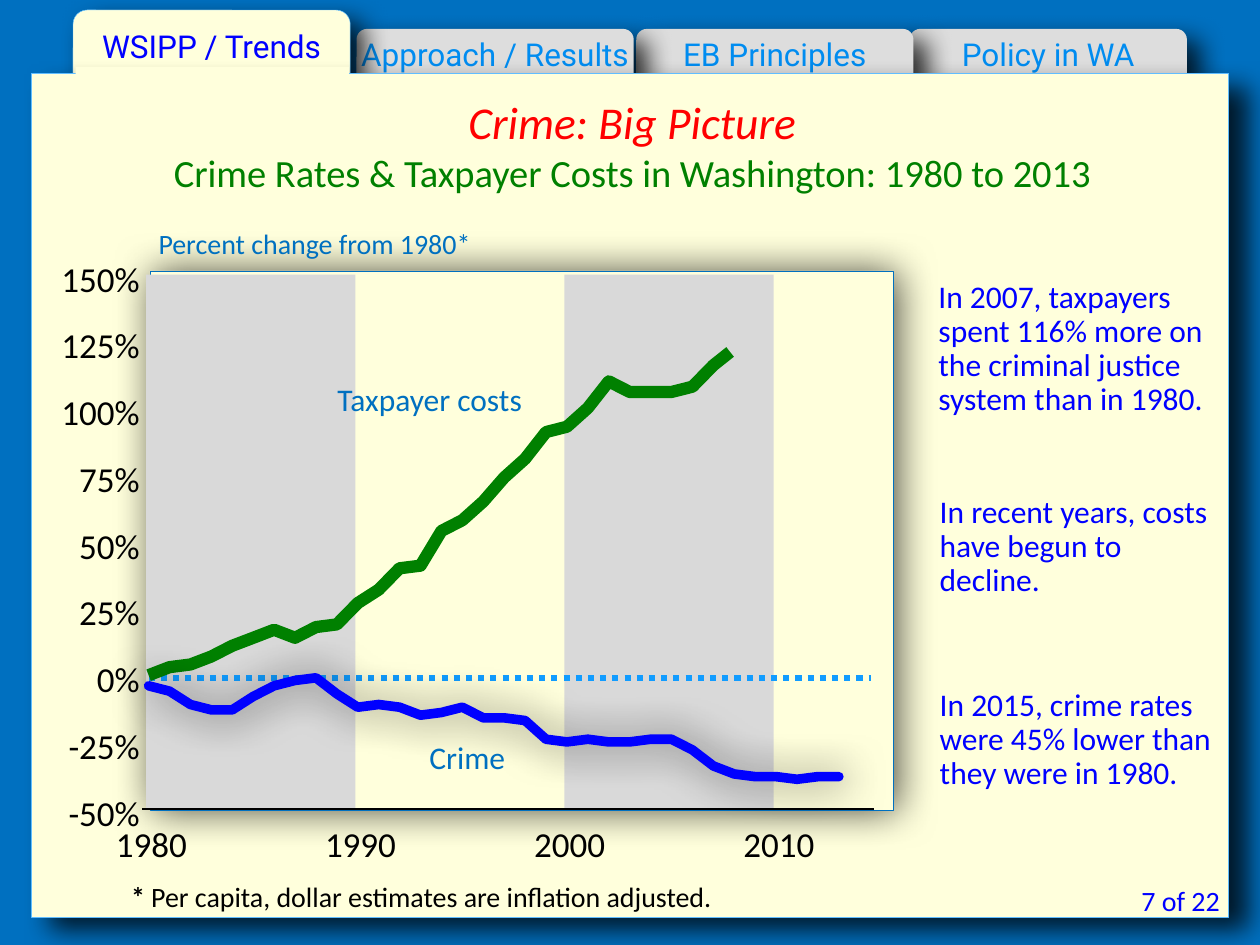
import pptx
import pptx.util
import pptx.dml.color
import pptx.enum.shapes
import pptx.enum.text
import pptx.enum.dml
import pptx.oxml
import pptx.oxml.ns
import pptx.oxml.xmlchemy

Inches, Pt = pptx.util.Inches, pptx.util.Pt
RGB = pptx.dml.color.RGBColor
Shape = pptx.enum.shapes.MSO_SHAPE
Align = pptx.enum.text.PP_ALIGN
Anchor = pptx.enum.text.MSO_ANCHOR
Node = pptx.oxml.xmlchemy.OxmlElement
qn = pptx.oxml.ns.qn

SKY = RGB(0x00, 0x70, 0xC0)
CREAM = RGB(0xFF, 0xFF, 0xDC)
GREY = RGB(0xDD, 0xDD, 0xDD)
BAND = RGB(0xD9, 0xD9, 0xD9)
PALE = RGB(0x60, 0xBD, 0xFF)
LINK = RGB(0x00, 0x8C, 0xF0)
DOTS = RGB(0x11, 0x9C, 0xFF)
BLUE = RGB(0x00, 0x00, 0xFF)
GREEN = RGB(0x00, 0x80, 0x00)
RED = RGB(0xFF, 0x00, 0x00)
BLACK = RGB(0x00, 0x00, 0x00)

deck = pptx.Presentation()
deck.slide_width, deck.slide_height = Inches(10), Inches(7.5)
slide = deck.slides.add_slide(deck.slide_layouts[5])
slide.background.fill.solid()
slide.background.fill.fore_color.rgb = SKY
shapes = slide.shapes


def style(shape, fill=None, line=None, width=0.25, shade=None):
    """Set fill, line and an outer shadow (alpha %, blur, distance, angle)."""
    shape.shadow.inherit = False
    if fill is None:
        shape.fill.background()
    else:
        shape.fill.solid()
        shape.fill.fore_color.rgb = fill
    if line is None:
        shape.line.fill.background()
    else:
        shape.line.color.rgb = line
        shape.line.width = Pt(width)
    if shade:
        alpha, blur, dist, angle = shade
        glow = pptx.oxml.parse_xml(
            '<a:outerShdw xmlns:a="http://schemas.openxmlformats.org/drawingml/2006/main" '
            f'blurRad="{Pt(blur)}" dist="{Pt(dist)}" dir="{angle * 60000}" algn="tl" '
            f'rotWithShape="0"><a:srgbClr val="000000"><a:alpha val="{alpha * 1000}"/>'
            '</a:srgbClr></a:outerShdw>')
        shape._element.spPr.find(qn("a:effectLst")).append(glow)


def write(shape, lines, inset=(0, 0, 0, 0), align=Align.LEFT, anchor=Anchor.TOP, space=1.0):
    """Fill a shape with paragraphs, each a list of (text, size, colour, extras)."""
    frame = shape.text_frame
    left, top, right, foot = (Inches(n) for n in inset)
    look = dict(word_wrap=True, margin_left=left, margin_top=top, margin_right=right,
                margin_bottom=foot, vertical_anchor=anchor,
                auto_size=pptx.enum.text.MSO_AUTO_SIZE.NONE)
    for name, value in look.items():
        setattr(frame, name, value)
    for i, runs in enumerate(lines):
        para = frame.add_paragraph() if i else frame.paragraphs[0]
        para.alignment, para.line_spacing = align, space
        for text, size, color, extra in runs:
            run = para.add_run()
            run.text = text
            run.font.color.rgb = color
            for name, value in (dict(name="Calibri", size=Pt(size)) | extra).items():
                setattr(run.font, name, value)


# Tabs, the front one last
DEEP = (79, 15, 10, 40)
tabs = [
    ("Policy in WA", 7.22, 0.23, 0.5, GREY, None, LINK),
    ("EB Principles", 5.05, 0.23, 0.5, GREY, None, LINK),
    ("Approach / Results", 2.83, 0.23, 0.5, GREY, None, LINK),
    ("WSIPP / Trends", 0.58, 0.08, 0.67, CREAM, PALE, BLUE),
]
for label, x, y, high, fill, edge, ink in tabs:
    tab = shapes.add_shape(Shape.ROUNDED_RECTANGLE, Inches(x), Inches(y), Inches(2.2), Inches(high))
    style(tab, fill, edge, shade=DEEP)
    write(tab, [[(label, 18, ink, dict(name="Roboto"))]], (0, 0, 0, 0.1), Align.CENTER, Anchor.MIDDLE)

# Page panel, the strip that joins it to the front tab, and the plot area
SOFT = (71, 23, 2, 20)
for x, y, wide, high, edge, width, shade in [
    (0.25, 0.58, 9.5, 6.7, PALE, 0.05, (79, 15, 14, 36)),
    (0.6, 0.53, 2.17, 0.22, None, 0, None),
    (1.19, 2.15, 5.9, 4.28, SKY, 0.25, SOFT),
]:
    box = shapes.add_shape(Shape.RECTANGLE, Inches(x), Inches(y), Inches(wide), Inches(high))
    style(box, CREAM, edge, width, shade)

# Title, brought in front of the panel
title = shapes.title
for name, value in dict(left=0.48, top=0.75, width=9.08, height=0.81).items():
    setattr(title, name, Inches(value))
write(title, [
    [("Crime: Big Picture", 26, RED, dict(italic=True))],
    [("Crime Rates & Taxpayer Costs in Washington: 1980 to 2013", 22, GREEN, {})],
], align=Align.CENTER)
shapes._spTree.append(title._element)

# Decade bands
pen = None
for x in (1.16, 4.48):
    if pen is None:
        pen = shapes.build_freeform(Inches(x), Inches(2.18))
    else:
        pen.move_to(Inches(x), Inches(2.18))
    pen.add_line_segments([(Inches(x + dx), Inches(y)) for dx, y in
                           ((1.66, 2.18), (1.66, 6.42), (0, 6.42))], close=True)
style(pen.convert_to_shape(), BAND)

# Scales: inches per year and per percent, from 1980 and 0%
LEFT, ZERO, YEAR, RATE = 1.18, 5.38, 0.166, 0.0212

# Base axis and dotted zero line
for x, end, y, color, width in [(1.13, 6.94, 6.42, BLACK, 1), (LEFT, 6.91, ZERO, DOTS, 3.5)]:
    rule = shapes.add_connector(pptx.enum.shapes.MSO_CONNECTOR.STRAIGHT,
                                Inches(x), Inches(y), Inches(end), Inches(y))
    rule.line.color.rgb = color
    rule.line.width = Pt(width)
    rule._element.spPr.append(Node("a:effectLst"))
rule.line.dash_style = pptx.enum.dml.MSO_LINE.ROUND_DOT

# Percent changes by year; costs stop late in 2007
costs = [1, 4, 5, 8, 12, 15, 18, 15, 19, 20, 28, 33, 41, 42, 55, 59, 66, 75, 82, 92,
         94, 101, 111, 107, 107, 107, 109, 117]
crime = [-3, -5, -10, -12, -12, -7, -3, -1, 0, -6, -11, -10, -11, -14, -13, -11, -15, -15,
         -16, -23, -24, -23, -24, -24, -23, -23, -27, -33, -36, -37, -37, -38, -37, -37]
for points, color, width, cap, shade in [
    (list(enumerate(costs)) + [(27.8, 122)], GREEN, 7, "flat", None),
    (list(enumerate(crime)), BLUE, 5.5, "rnd", SOFT),
]:
    spots = [(Inches(LEFT + n * YEAR), Inches(ZERO - v * RATE)) for n, v in points]
    pen = shapes.build_freeform(*spots[0])
    pen.add_line_segments(spots[1:], close=False)
    trend = pen.convert_to_shape()
    style(trend, None, color, width, shade)
    stroke = trend._element.spPr.find(qn("a:ln"))
    stroke.set("cap", cap)
    stroke.append(Node("a:round"))

# Axis labels
labels = [(f"{v}%", 0.4, ZERO - 0.16 - v * RATE, 0.71, Align.RIGHT) for v in range(-50, 151, 25)]
labels += [(str(1980 + 10 * i), 0.92 + 1.66 * i, 6.53, 0.57, Align.LEFT) for i in range(4)]
for label, x, y, wide, align in labels:
    box = shapes.add_textbox(Inches(x), Inches(y), Inches(wide), Inches(0.34))
    write(box, [[(label, 20, BLACK, {})]], align=align)

# Chart captions, side notes and page count
PAD = (0.1, 0.05, 0.1, 0.05)
for text, x, y, wide, high, size, color, align, space in [
    ("Percent change from 1980*", 1.16, 1.75, 3.92, 0.37, 16, SKY, Align.LEFT, 1.0),
    ("Taxpayer costs", 2.58, 2.97, 2.23, 0.4, 18, SKY, Align.LEFT, 1.0),
    ("Crime", 3.31, 5.81, 0.93, 0.4, 18, SKY, Align.LEFT, 1.0),
    ("In 2007, taxpayers spent 116% more on the criminal justice system than in 1980.",
     7.35, 2.18, 2.57, 1.19, 18, BLUE, Align.LEFT, 0.9),
    ("In recent years, costs have begun to decline.",
     7.36, 3.89, 2.39, 0.92, 18, BLUE, Align.LEFT, 0.9),
    ("In 2015, crime rates were 45% lower than they were in 1980.",
     7.36, 5.42, 2.39, 0.92, 18, BLUE, Align.LEFT, 0.9),
    ("7 of 22", 8.42, 6.96, 1.36, 0.37, 16, BLUE, Align.RIGHT, 1.0),
]:
    box = shapes.add_textbox(Inches(x), Inches(y), Inches(wide), Inches(high))
    write(box, [[(text, size, color, {})]], PAD, align, space=space)

# Footnote
foot = shapes.add_textbox(Inches(1.04), Inches(6.98), Inches(5), Inches(0.27))
write(foot, [[("* ", 16, BLACK, dict(bold=True)),
              ("Per capita, dollar estimates are inflation adjusted.", 16, BLACK, {})]])

deck.save("out.pptx")
